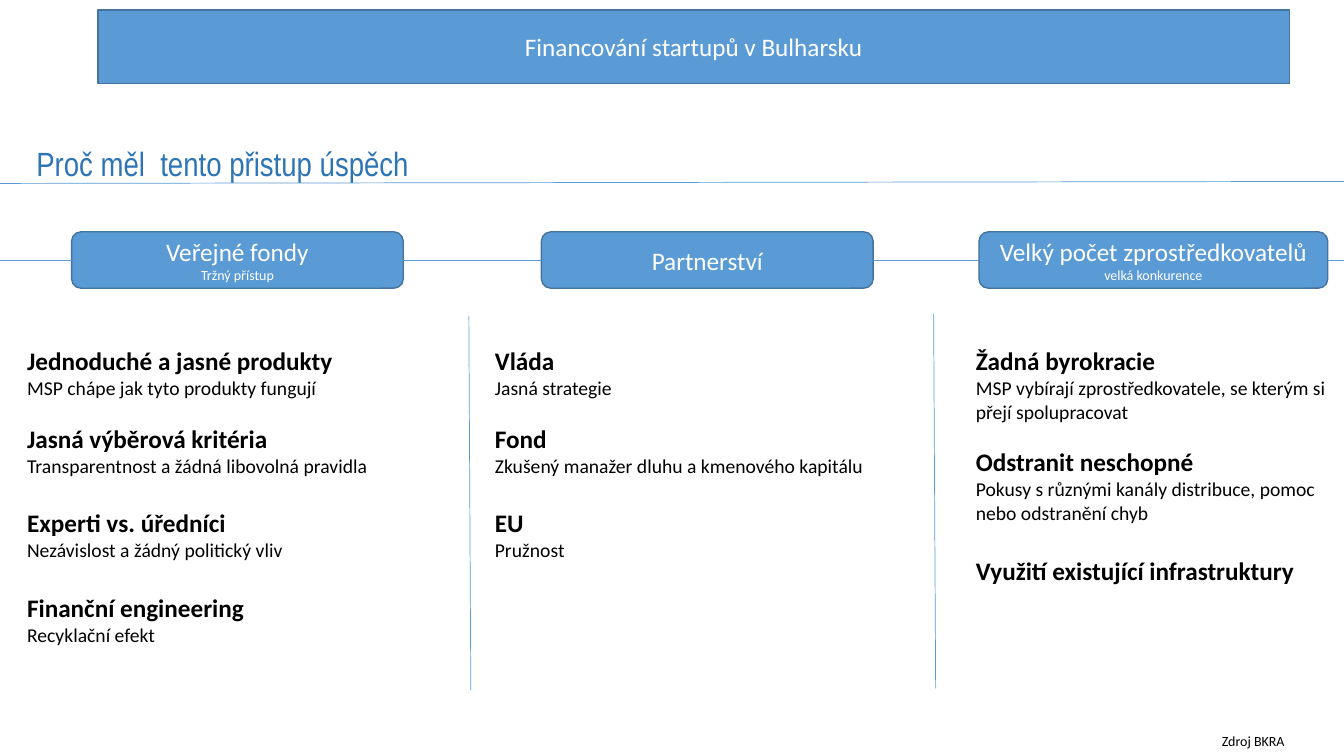
import pptx
import pptx.util
import pptx.dml.color
import pptx.enum.shapes
import pptx.enum.text
import lxml.etree

Inches, Pt = pptx.util.Inches, pptx.util.Pt
SHAPE = pptx.enum.shapes.MSO_SHAPE
ALIGN = pptx.enum.text.PP_ALIGN
ANCHOR = pptx.enum.text.MSO_ANCHOR
AUTO_SIZE = pptx.enum.text.MSO_AUTO_SIZE

COLORS = {
    "blue": "5B9BD5",
    "outline": "43739E",
    "heading": "2E75B6",
    "white": "FFFFFF",
    "black": "000000",
}
LEFT, RIGHT = 1, 3  # connection sites
PILLAR_TOP, PILLAR_HEIGHT = 2.3, 0.56
SLIDE_WIDTH, SLIDE_HEIGHT = 13.33, 7.5

# Each pillar: left, width, title, subtitle
PILLARS = [
    (0.71, 3.29, "Veřejné fondy", "Tržný přístup"),
    (5.37, 3.29, "Partnerství", None),
    (9.71, 3.46, "Velký počet zprostředkovatelů", "velká konkurence"),
]

# Each column: left, width, height, (point, explanation) pairs
COLUMNS = [
    (0.17, 4.29, 3.16, [
        ("Jednoduché a jasné produkty", "MSP chápe jak tyto produkty fungují"),
        ("Jasná výběrová kritéria", "Transparentnost a žádná libovolná pravidla"),
        ("Experti vs. úředníci", "Nezávislost a žádný politický vliv"),
        ("Finanční engineering", "Recyklační efekt"),
    ]),
    (4.81, 4.29, 2.26, [
        ("Vláda", "Jasná strategie"),
        ("Fond", "Zkušený manažer dluhu a kmenového kapitálu"),
        ("EU", "Pružnost"),
    ]),
    (9.58, 3.68, 2.49, [
        ("Žadná byrokracie",
         "MSP vybírají zprostředkovatele, se kterým si přejí spolupracovat"),
        ("Odstranit neschopné",
         "Pokusy s různými kanály distribuce, pomoc nebo odstranění chyb"),
        ("Využití existující infrastruktury", None),
    ]),
]


def rgb(name):
    return pptx.dml.color.RGBColor.from_string(COLORS[name])


def write_lines(frame, lines, color, align=ALIGN.LEFT, font="Calibri"):
    """Write (text, size, bold, space before) tuples as paragraphs."""
    frame.word_wrap = True
    for index, (text, size, bold, gap) in enumerate(lines):
        paragraph = frame.paragraphs[0] if index == 0 else frame.add_paragraph()
        paragraph.text = text
        paragraph.alignment = align
        paragraph.space_before = Pt(gap)
        paragraph.font.name = font
        paragraph.font.size = Pt(size)
        paragraph.font.bold = bold
        paragraph.font.color.rgb = rgb(color)


def add_box(slide, preset, left, top, width, height, lines):
    box = slide.shapes.add_shape(
        preset, Inches(left), Inches(top), Inches(width), Inches(height))
    box.shadow.inherit = False
    box.fill.solid()
    box.fill.fore_color.rgb = rgb("blue")
    box.line.color.rgb = rgb("outline")
    box.line.width = Pt(1)
    box.text_frame.vertical_anchor = ANCHOR.MIDDLE
    write_lines(box.text_frame, lines, "white", ALIGN.CENTER)
    return box


def add_text(slide, left, top, width, height, lines):
    text_box = slide.shapes.add_textbox(
        Inches(left), Inches(top), Inches(width), Inches(height))
    write_lines(text_box.text_frame, lines, "black")


def add_line(slide, start, end, start_box=None, end_box=None):
    """Draw a thin line, joined to the right of start_box and left of end_box."""
    line = slide.shapes.add_connector(
        pptx.enum.shapes.MSO_CONNECTOR.STRAIGHT,
        Inches(start[0]), Inches(start[1]), Inches(end[0]), Inches(end[1]))
    line.line.color.rgb = rgb("blue")
    line.line.width = Pt(0.5)
    lxml.etree.SubElement(
        line._element.spPr, pptx.oxml.ns.qn("a:effectLst"))
    if start_box is not None:
        line.begin_connect(start_box, RIGHT)
    if end_box is not None:
        line.end_connect(end_box, LEFT)


def add_heading(slide, text):
    heading = slide.shapes.title
    heading.left, heading.top = Inches(0.26), Inches(1.37)
    heading.width, heading.height = Inches(7.1), Inches(0.5)
    frame = heading.text_frame
    frame.auto_size = AUTO_SIZE.NONE
    frame.vertical_anchor = ANCHOR.TOP
    write_lines(frame, [(text, 24, False, 0)], "heading", font="Arial Narrow")


def add_pillars(slide):
    boxes = []
    for left, width, title, subtitle in PILLARS:
        lines = [(title, 18, False, 0)]
        if subtitle:
            lines.append((subtitle, 10, False, 0))
        boxes.append(add_box(slide, SHAPE.ROUNDED_RECTANGLE, left, PILLAR_TOP,
                             width, PILLAR_HEIGHT, lines))

    # Line running from edge to edge through the pillars
    middle = PILLAR_TOP + PILLAR_HEIGHT / 2
    for before, after in zip([None] + boxes, boxes + [None]):
        add_line(slide, (0, middle), (SLIDE_WIDTH, middle), before, after)


def add_column(slide, left, width, height, points):
    lines = []
    for index, (point, explanation) in enumerate(points):
        gap = (0, 17, 22, 22)[index]
        lines.append((point, 18, True, gap))
        if explanation:
            lines.append((explanation, 14, False, 0))
    add_text(slide, left, 3.38, width, height, lines)


def main():
    presentation = pptx.Presentation()
    presentation.slide_width = Inches(SLIDE_WIDTH)
    presentation.slide_height = Inches(SLIDE_HEIGHT)
    slide = presentation.slides.add_slide(presentation.slide_layouts[5])

    # Banner and heading
    add_box(slide, SHAPE.RECTANGLE, 0.97, 0.1, 11.82, 0.73,
            [("Financování startupů v Bulharsku", 18, False, 0)])
    add_line(slide, (0, 1.82), (SLIDE_WIDTH, 1.8))
    add_heading(slide, "Proč měl  tento přistup úspěch")

    # Pillars, column dividers and columns
    add_pillars(slide)
    add_line(slide, (4.65, 3.14), (4.67, 6.85))
    add_line(slide, (9.26, 3.11), (9.28, 6.83))
    for column in COLUMNS:
        add_column(slide, *column)

    # Source
    add_text(slide, 12.02, 7.22, 0.9, 0.27, [("Zdroj BKRA", 10, False, 0)])

    presentation.save("out.pptx")


if __name__ == "__main__":
    main()
